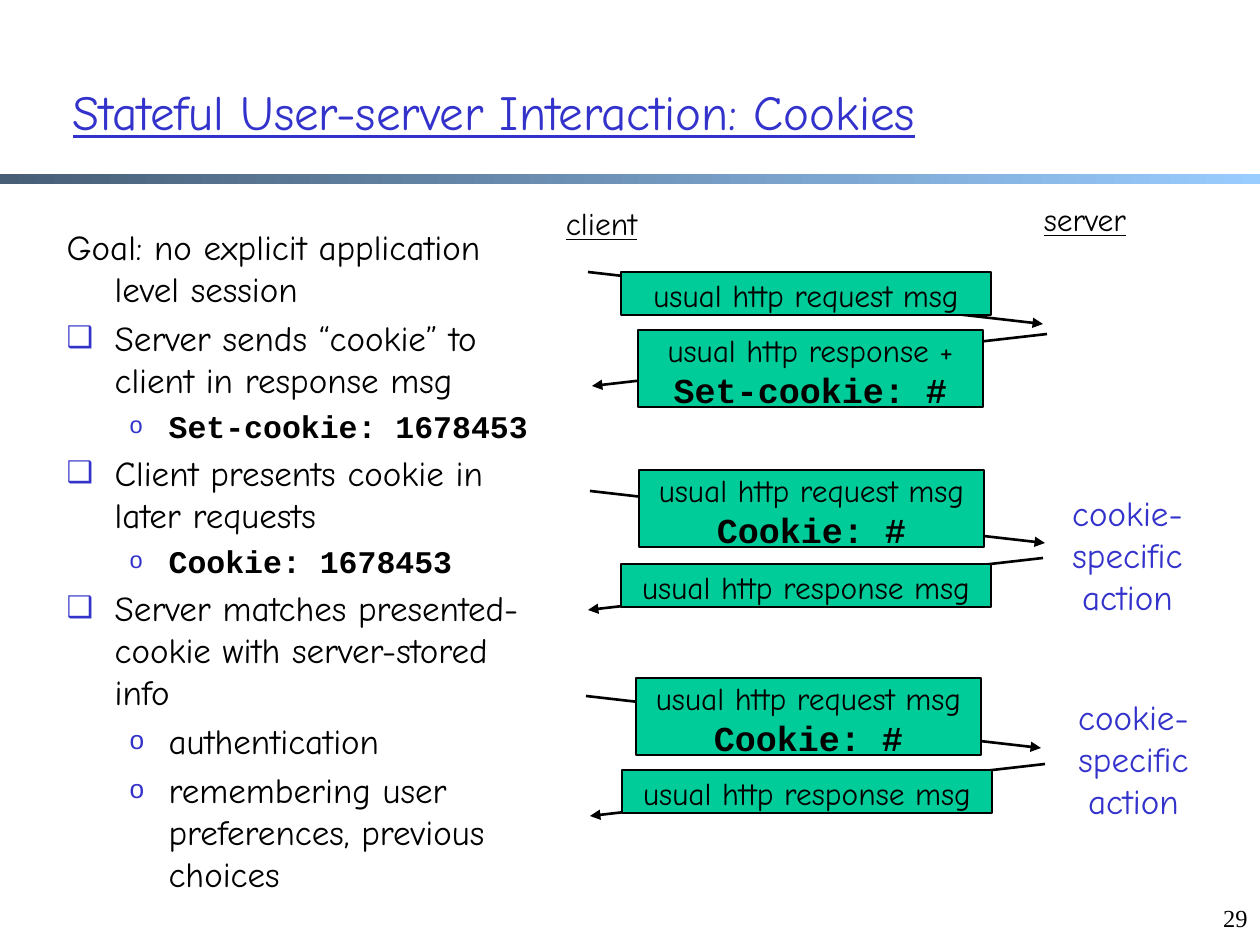
from dataclasses import dataclass

from lxml import etree
from pptx import Presentation
from pptx import util as u
from pptx.dml.color import RGBColor
from pptx.enum import shapes, text
from pptx.oxml.ns import qn

EMU_PER_PX = 914400 / 126
HAND, CODE, SERIF = "Comic Neue", "Courier New", "Times New Roman"
BLACK, BLUE, GREEN = "000000", "3333CC", "00CC99"
ARROW_WIDTH, ARROW_DROP = 455, 52


@dataclass(frozen=True)
class Style:
    size: int
    font: str = HAND
    color: str = BLACK
    bold: bool = False
    underline: bool = False


@dataclass(frozen=True)
class Bullet:
    symbol: str
    percent: int
    margin: int
    hanging: int


@dataclass(frozen=True)
class Item:
    text: str
    style: Style
    level: int = 0
    bulleted: bool = True


@dataclass(frozen=True)
class Message:
    """A labelled arrow; left and top bound the arrow."""
    left: int
    top: int
    to_server: bool
    box_left: int
    box_top: int
    label: str
    header: str = ""


@dataclass(frozen=True)
class Caption:
    left: int
    top: int
    width: int
    height: int
    lines: tuple[str, ...]
    style: Style
    align: text.PP_ALIGN = text.PP_ALIGN.CENTER
    wrap: bool = False


LABEL = Style(18)
HEADER = Style(20, CODE, bold=True)
TITLE = Style(28, color=BLUE, underline=True)
POINT = Style(20)
CODE_POINT = Style(18, CODE, bold=True)
HEADING = Style(18, underline=True)
ACTION = Style(20, color=BLUE)
ACTION_LINES = ("cookie-", "specific", "action")

BULLETS = (Bullet("❑", 85, 48, 48), Bullet("o", 75, 102, 39))

ITEMS = (
    Item("Goal: no explicit application level session", POINT, bulleted=False),
    Item("Server sends “cookie” to client in response msg", POINT),
    Item("Set-cookie: 1678453", CODE_POINT, 1),
    Item("Client presents cookie in later requests", POINT),
    Item("Cookie: 1678453", CODE_POINT, 1),
    Item("Server matches presented-cookie with server-stored info", POINT),
    Item("authentication", POINT, 1),
    Item("remembering user preferences, previous choices", POINT, 1),
)

REQUEST, RESPONSE = "usual http request msg", "usual http response msg"
MESSAGES = (
    Message(588, 272, True, 621, 272, REQUEST),
    Message(592, 334, False, 638, 330, "usual http response +", "Set-cookie: #"),
    Message(590, 491, True, 639, 470, REQUEST, "Cookie: #"),
    Message(588, 558, False, 621, 564, RESPONSE),
    Message(586, 696, True, 636, 678, REQUEST, "Cookie: #"),
    Message(590, 764, False, 622, 770, RESPONSE),
)

CAPTIONS = (
    Caption(534, 198, 135, 63, ("client",), HEADING),
    Caption(1009, 194, 152, 63, ("server",), HEADING),
    Caption(1051, 485, 153, 139, ACTION_LINES, ACTION),
    Caption(1057, 689, 153, 139, ACTION_LINES, ACTION),
    Caption(1197, 897, 63, 63, ("29",), Style(14, SERIF), text.PP_ALIGN.RIGHT, True),
)


def px(length: int) -> u.Emu:
    return u.Emu(round(length * EMU_PER_PX))


def rgb(color: str) -> RGBColor:
    return RGBColor.from_string(color)


def place(shape, left: int, top: int, width: int, height: int) -> None:
    shape.left, shape.top = px(left), px(top)
    shape.width, shape.height = px(width), px(height)


def format_paragraph(paragraph, style: Style, align=text.PP_ALIGN.LEFT) -> None:
    paragraph.alignment = align
    for run in paragraph.runs:
        font = run.font
        font.name, font.size = style.font, u.Pt(style.size)
        font.bold, font.underline = style.bold, style.underline
        font.color.rgb = rgb(style.color)


def set_bullet(paragraph, bullet: Bullet, visible: bool) -> None:
    properties = paragraph._p.get_or_add_pPr()
    properties.set("marL", str(px(bullet.margin)))
    properties.set("indent", str(px(-bullet.hanging)))
    if not visible:
        etree.SubElement(properties, qn("a:buNone"))
        return
    color = etree.SubElement(properties, qn("a:buClr"))
    etree.SubElement(color, qn("a:srgbClr"), val=BLUE)
    etree.SubElement(properties, qn("a:buSzPct"), val=str(bullet.percent * 1000))
    etree.SubElement(properties, qn("a:buChar"), char=bullet.symbol)


def add_title(slide) -> None:
    title = slide.shapes.title
    place(title, 60, 32, 1071, 157)
    title.text_frame.text = "Stateful User-server Interaction: Cookies"
    title.text_frame.vertical_anchor = text.MSO_ANCHOR.MIDDLE
    title.text_frame.auto_size = text.MSO_AUTO_SIZE.NONE
    format_paragraph(title.text_frame.paragraphs[0], TITLE)


def add_points(slide) -> None:
    body = slide.placeholders[1]
    place(body, 54, 219, 496, 593)
    frame = body.text_frame
    frame.auto_size = text.MSO_AUTO_SIZE.NONE
    frame.text = "\n".join(item.text for item in ITEMS)
    for paragraph, item in zip(frame.paragraphs, ITEMS):
        paragraph.level = item.level
        paragraph.space_before = u.Pt(item.style.size * 0.2)
        format_paragraph(paragraph, item.style)
        set_bullet(paragraph, BULLETS[item.level], item.bulleted)


def add_rule(slide) -> None:
    rule = slide.shapes.add_shape(
        shapes.MSO_SHAPE.RECTANGLE, px(0), px(174), px(1260), px(10))
    rule.shadow.inherit = False
    rule.line.fill.background()
    rule.fill.gradient()
    rule.fill.gradient_angle = 0
    for stop, color in zip(rule.fill.gradient_stops, ("475E76", "99CCFF")):
        stop.color.rgb = rgb(color)


def add_arrow(slide, message: Message) -> None:
    start, end = message.left, message.left + ARROW_WIDTH
    if not message.to_server:
        start, end = end, start
    arrow = slide.shapes.add_connector(
        shapes.MSO_CONNECTOR.STRAIGHT, px(start), px(message.top),
        px(end), px(message.top + ARROW_DROP))
    arrow.line.color.rgb = rgb(BLACK)
    arrow.line.width = u.Pt(1.5)
    etree.SubElement(arrow.line._get_or_add_ln(), qn("a:tailEnd"), type="triangle")
    etree.SubElement(arrow._element.spPr, qn("a:effectLst"))


def add_message(slide, message: Message) -> None:
    add_arrow(slide, message)
    width, height, inset = (345, 77, 1) if message.header else (370, 43, 4)
    box = slide.shapes.add_shape(
        shapes.MSO_SHAPE.RECTANGLE, px(message.box_left), px(message.box_top),
        px(width), px(height))
    box.shadow.inherit = False
    box.fill.solid()
    box.fill.fore_color.rgb = rgb(GREEN)
    box.line.color.rgb = rgb(BLACK)
    box.line.width = u.Pt(0.75)
    frame = box.text_frame
    frame.margin_top, frame.margin_bottom = px(inset), px(0)
    frame.margin_left = frame.margin_right = px(0)
    frame.vertical_anchor = text.MSO_ANCHOR.TOP
    frame.text = "\n".join(filter(None, (message.label, message.header)))
    for paragraph, style in zip(frame.paragraphs, (LABEL, HEADER)):
        format_paragraph(paragraph, style, text.PP_ALIGN.CENTER)


def add_caption(slide, caption: Caption) -> None:
    box = slide.shapes.add_textbox(
        px(caption.left), px(caption.top), px(caption.width), px(caption.height))
    box.text_frame.word_wrap = caption.wrap
    box.text_frame.text = "\n".join(caption.lines)
    for paragraph in box.text_frame.paragraphs:
        format_paragraph(paragraph, caption.style, caption.align)


def main() -> None:
    presentation = Presentation()
    presentation.slide_width, presentation.slide_height = px(1260), px(945)
    slide = presentation.slides.add_slide(presentation.slide_layouts[1])
    add_rule(slide)
    add_title(slide)
    add_points(slide)
    for message in MESSAGES:
        add_message(slide, message)
    for caption in CAPTIONS:
        add_caption(slide, caption)
    presentation.save("out.pptx")


if __name__ == "__main__":
    main()
